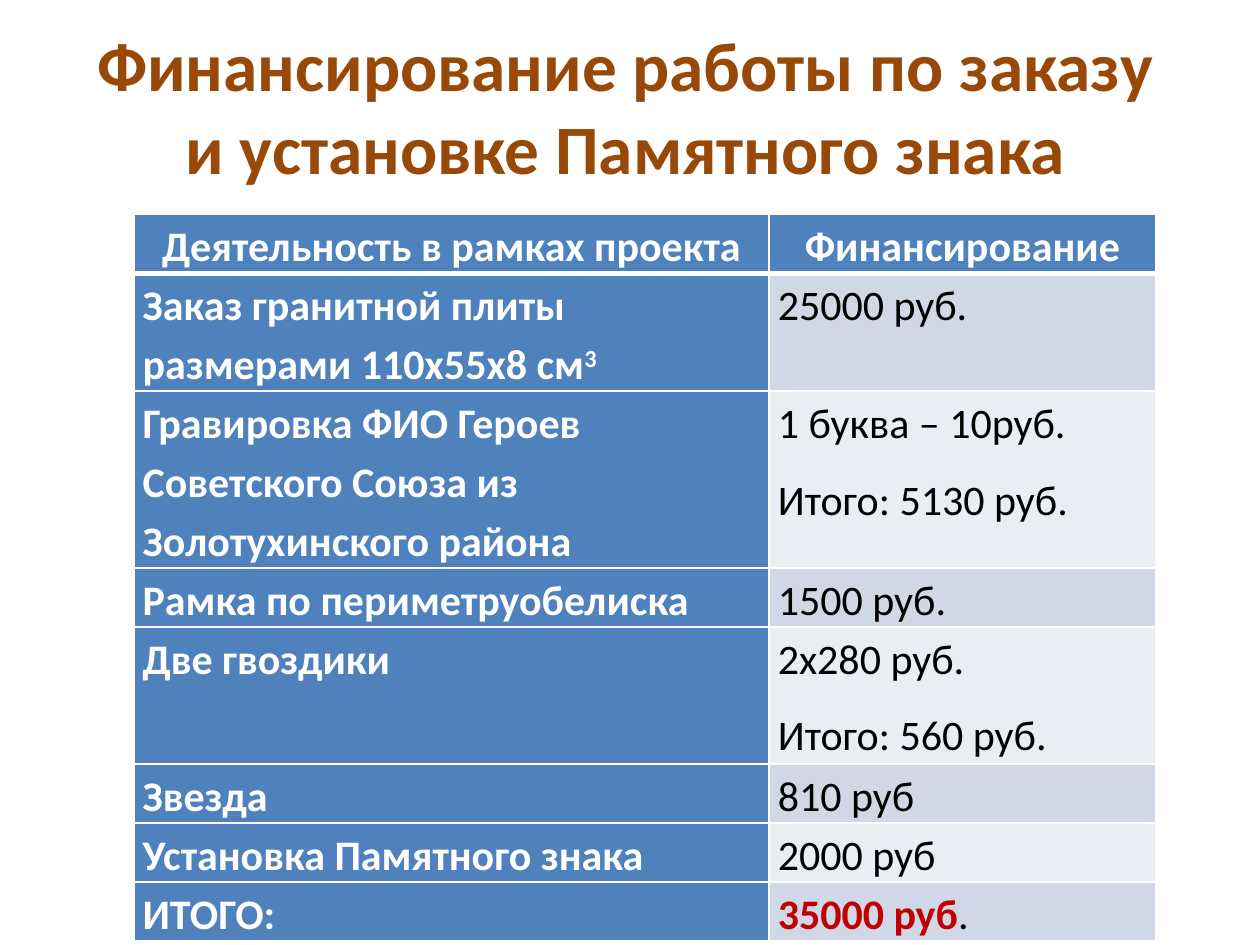
from dataclasses import dataclass

from lxml.etree import fromstring
from pptx import Presentation
from pptx.dml.color import RGBColor as Rgb
from pptx.enum.text import MSO_ANCHOR as Anchor, MSO_AUTO_SIZE as Fit, PP_ALIGN as Align
from pptx.oxml.ns import nsdecls
from pptx.util import Pt

HUES = {
    "title": "984807", "head": "4F81BD", "odd": "D0D8E8", "even": "E9EDF4",
    "white": "FFFFFF", "black": "000000", "red": "C00000",
}
FONT = "Calibri"
COLS = (363, 221)
LOW, MID, TALL = 30.2, 62, 78.5


@dataclass(frozen=True)
class Run:
    text: str
    hue: str = ""
    bold: bool | None = None
    base: int = 0


@dataclass(frozen=True)
class Row:
    work: list[list[Run]]
    cost: list[list[Run]]
    high: float = LOW


def plain(*lines: str) -> list[list[Run]]:
    """One paragraph of one run for each line."""
    return [[Run(line)] for line in lines]


ROWS = [
    Row(plain("Деятельность в рамках проекта"), plain("Финансирование")),
    Row([[Run("Заказ гранитной плиты размерами 110х55х8 см"), Run("3", base=30000)]],
        plain("25000 руб."), MID),
    Row(plain("Гравировка ФИО Героев Советского Союза из Золотухинского района"),
        plain("1 буква – 10руб.", "Итого: 5130 руб."), TALL),
    Row(plain("Рамка по периметруобелиска"), plain("1500 руб.")),
    Row(plain("Две гвоздики"), plain("2х280 руб.", "Итого: 560 руб."), TALL),
    Row(plain("Звезда"), plain("810 руб")),
    Row(plain("Установка Памятного знака"), plain("2000 руб")),
    Row(plain("ИТОГО:"), [[Run("35000 руб", "red", True), Run(".")]]),
]


def color(name: str) -> Rgb:
    return Rgb.from_string(HUES[name])


def write(frame, paras: list[list[Run]], *, size: float, hue: str, bold: bool,
          align=Align.LEFT, line: float | None = None, after: float = 0) -> None:
    for i, runs in enumerate(paras):
        para = frame.paragraphs[0] if i == 0 else frame.add_paragraph()
        para.alignment = align
        para.line_spacing = line
        para.space_after = Pt(after)
        for item in runs:
            run = para.add_run()
            run.text = item.text
            font = run.font
            font.name, font.size = FONT, Pt(size)
            font.bold = bold if item.bold is None else item.bold
            font.color.rgb = color(item.hue or hue)
            if item.base:
                run._r.get_or_add_rPr().set("baseline", str(item.base))


def edge(cell, top: float, low: float) -> None:
    """White cell borders, with their widths above and below."""
    props = cell._tc.get_or_add_tcPr()
    sides = (("L", 1), ("R", 1), ("T", top), ("B", low))
    for i, (side, width) in enumerate(sides):
        props.insert(i, fromstring(
            f'<a:ln{side} {nsdecls("a")} w="{Pt(width)}"><a:solidFill>'
            f'<a:srgbClr val="{HUES["white"]}"/></a:solidFill></a:ln{side}>'))


def draw(table, r: int, row: Row) -> None:
    table.rows[r].height = Pt(row.high)
    for c, paras in enumerate((row.work, row.cost)):
        cell = table.cell(r, c)
        dark = r == 0 or c == 0
        cell.margin_left = cell.margin_right = Pt(5)
        cell.margin_top = cell.margin_bottom = Pt(0)
        cell.fill.solid()
        cell.fill.fore_color.rgb = color("head" if dark else "odd" if r % 2 else "even")
        edge(cell, 3 if r == 1 else 1, 3 if r == 0 else 1)
        write(cell.text_frame, paras, size=24, hue="white" if dark else "black",
              bold=dark, align=Align.CENTER if r == 0 else Align.LEFT,
              line=1.15, after=10)


def main() -> None:
    deck = Presentation()
    deck.slide_width, deck.slide_height = Pt(720), Pt(540)
    slide = deck.slides.add_slide(deck.slide_layouts[5])

    # Title
    title = slide.shapes.title
    title.left, title.top, title.width, title.height = Pt(42.5), Pt(15), Pt(630), Pt(90)
    frame = title.text_frame
    frame.word_wrap, frame.auto_size = True, Fit.NONE
    frame.vertical_anchor = Anchor.MIDDLE
    write(frame, plain("Финансирование работы по заказу и установке Памятного знака"),
          size=39.6, hue="title", bold=True, align=Align.CENTER)

    # Cost table
    high = sum(row.high for row in ROWS)
    table = slide.shapes.add_table(len(ROWS), len(COLS), Pt(76.5), Pt(122.5),
                                   Pt(sum(COLS)), Pt(high)).table
    table.horz_banding = False
    for col, width in zip(table.columns, COLS):
        col.width = Pt(width)
    for r, row in enumerate(ROWS):
        draw(table, r, row)

    deck.save("out.pptx")


if __name__ == "__main__":
    main()
